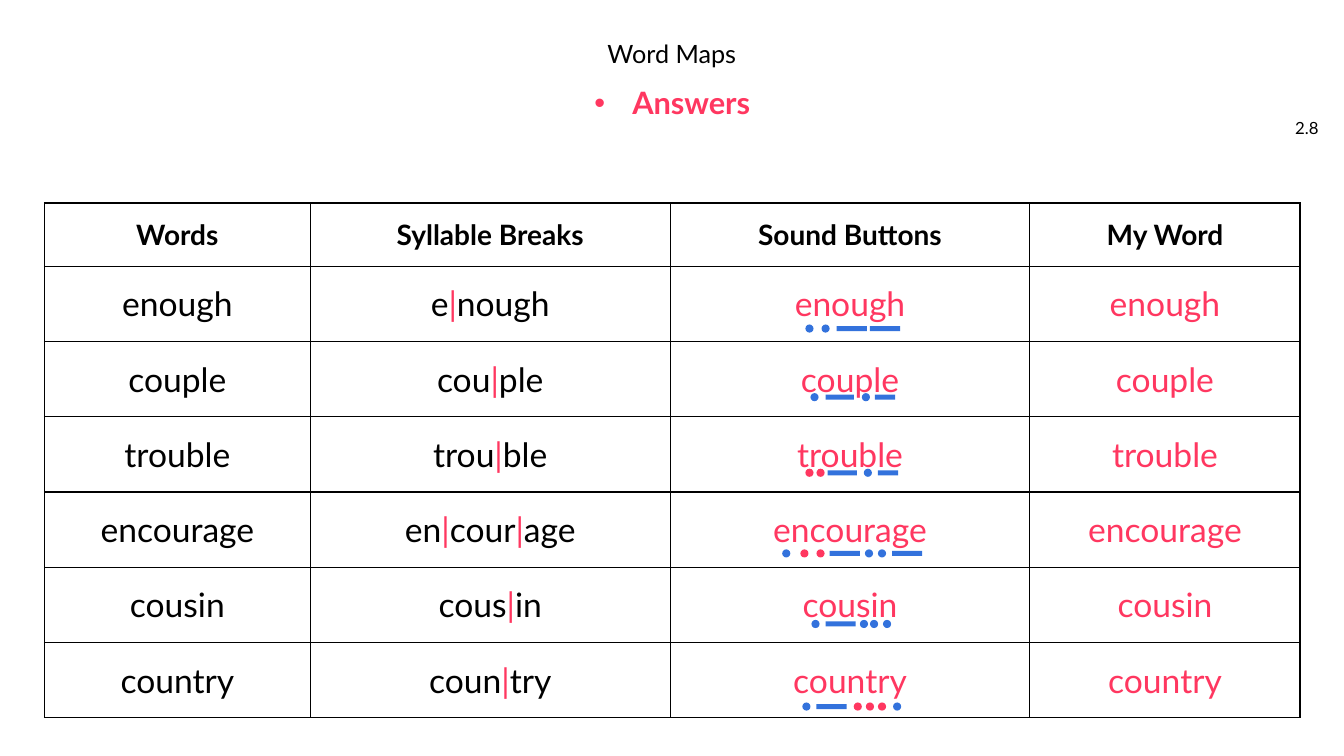
from dataclasses import dataclass

from lxml import etree
from pptx import Presentation
from pptx import util as u
from pptx.dml import color
from pptx.enum import shapes, text
from pptx.oxml import ns

Pt = u.Pt


@dataclass(frozen=True)
class Theme:
    font: str = "Lato"
    black: str = "000000"
    pink: str = "FF3760"
    blue: str = "3372DC"
    title: int = 18
    subtitle: int = 22
    header: int = 20
    word: int = 24
    number: int = 12


THEME = Theme()


@dataclass(frozen=True)
class Mark:
    left: float
    width: float = 0
    fill: str = THEME.blue


def pink_dot(left):
    return Mark(left, fill=THEME.pink)


DOT_SIZE = 5.8
BAR_HEIGHT = 3.6
HEADERS = ["Words", "Syllable Breaks", "Sound Buttons", "My Word"]
COLUMN_WIDTHS = [190, 257, 257, 193]
HEADER_HEIGHT, WORD_HEIGHT = 45.2, 53.75
SYLLABLES = ["e|nough", "cou|ple", "trou|ble", "en|cour|age", "cous|in", "coun|try"]
SOUND_BUTTONS = [
    (231.8, [Mark(575.3), Mark(586.8), Mark(597.6, 21.6), Mark(621.4, 21.6)]),
    (280.8, [Mark(578.9), Mark(589.7, 20.2), Mark(615.6), Mark(625, 14.4)]),
    (334.8, [pink_dot(575.3), pink_dot(583.2), Mark(591.1, 20.9), Mark(617),
             Mark(627.1, 14.4)]),
    (392.4, [Mark(558.7), pink_dot(571.7), pink_dot(583.2), Mark(592.6, 21.6),
             Mark(617.8), Mark(627.1), Mark(637.2, 21.6)]),
    (442.8, [Mark(579.6), Mark(589.7, 21.6), Mark(614.2), Mark(621.4), Mark(630.7)]),
    (501.8, [Mark(573.1), Mark(583.2, 21.6), pink_dot(609.8), pink_dot(618.5),
             pink_dot(627.1), Mark(637.9)]),
]


def rgb(value):
    return color.RGBColor.from_string(value)


def style_paragraph(para, size, ink, bold=False, align=text.PP_ALIGN.CENTER):
    para.alignment = align
    para.font.name = THEME.font
    para.font.size = Pt(size)
    para.font.bold = bold
    para.font.color.rgb = rgb(ink)


def place(box, left, top, width, height):
    box.left, box.top, box.width, box.height = map(Pt, (left, top, width, height))


def fill_text(box, words, size, ink, **style):
    frame = box.text_frame
    frame.text = words
    frame.word_wrap = True
    frame.auto_size = text.MSO_AUTO_SIZE.NONE
    frame.vertical_anchor = text.MSO_ANCHOR.MIDDLE
    para = frame.paragraphs[0]
    style_paragraph(para, size, ink, **style)
    return para


def fill_heading(box, words, size, ink, bold=False):
    para = fill_text(box, words, size, ink, bold=bold)
    para.line_spacing = 0.9
    para.space_before = Pt(0)


def remove_bullet(para):
    properties = para._p.get_or_add_pPr()
    properties.set("marL", "0")
    properties.set("indent", "0")
    etree.SubElement(properties, ns.qn("a:buNone"))


def add_borders(cell):
    properties = cell._tc.get_or_add_tcPr()
    for side in ("lnL", "lnR", "lnT", "lnB"):
        line = etree.SubElement(properties, ns.qn(f"a:{side}"), w=str(Pt(1)))
        solid = etree.SubElement(line, ns.qn("a:solidFill"))
        etree.SubElement(solid, ns.qn("a:srgbClr"), val=THEME.black)


def fill_cell(cell, words, size, ink, bold=False):
    add_borders(cell)
    cell.fill.background()
    cell.vertical_anchor = text.MSO_ANCHOR.MIDDLE
    para = cell.text_frame.paragraphs[0]
    style_paragraph(para, size, ink, bold)
    for index, syllable in enumerate(words.split("|")):
        if index:
            span = para.add_run()
            span.text = "|"
            span.font.color.rgb = rgb(THEME.pink)
        para.add_run().text = syllable


def add_word_table(page):
    frame = page.shapes.add_table(
        len(SYLLABLES) + 1, len(HEADERS), Pt(31.7), Pt(145),
        Pt(sum(COLUMN_WIDTHS)), Pt(HEADER_HEIGHT + WORD_HEIGHT * len(SYLLABLES)))
    table = frame.table
    table.first_row = table.horz_banding = False
    for column, width in zip(table.columns, COLUMN_WIDTHS):
        column.width = Pt(width)
    for index, row in enumerate(table.rows):
        row.height = Pt(WORD_HEIGHT if index else HEADER_HEIGHT)
    for cell, header in zip(table.rows[0].cells, HEADERS):
        fill_cell(cell, header, THEME.header, THEME.black, bold=True)
    inks = [THEME.black, THEME.black, THEME.pink, THEME.pink]
    for index, syllables in enumerate(SYLLABLES, start=1):
        word = syllables.replace("|", "")
        entries = [word, syllables, word, word]
        for cell, entry, ink in zip(table.rows[index].cells, entries, inks):
            fill_cell(cell, entry, THEME.word, ink)


def add_sound_buttons(page, top, marks):
    group = page.shapes.add_group_shape()
    for mark in marks:
        if mark.width:
            kind, width, height = shapes.MSO_SHAPE.RECTANGLE, mark.width, BAR_HEIGHT
        else:
            kind, width, height = shapes.MSO_SHAPE.OVAL, DOT_SIZE, DOT_SIZE
        offset = (DOT_SIZE - height) / 2
        button = group.shapes.add_shape(
            kind, Pt(mark.left), Pt(top + offset), Pt(width), Pt(height))
        button.shadow.inherit = False
        button.fill.solid()
        button.fill.fore_color.rgb = rgb(mark.fill)
        button.line.fill.background()


def main():
    deck = Presentation()
    deck.slide_width, deck.slide_height = Pt(960), Pt(540)
    page = deck.slides.add_slide(deck.slide_layouts[1])

    title = page.shapes.title
    place(title, 275, 26.6, 409.7, 25.2)
    fill_heading(title, "Word Maps", THEME.title, THEME.black)

    subtitle = page.placeholders[1]
    place(subtitle, 150.5, 60.5, 659.5, 28.8)
    remove_bullet(subtitle.text_frame.paragraphs[0])
    fill_heading(subtitle, "Answers", THEME.subtitle, THEME.pink, bold=True)

    number = page.shapes.add_textbox(Pt(903.6), Pt(77), Pt(45.4), Pt(28.8))
    fill_text(number, "2.8", THEME.number, THEME.black, align=text.PP_ALIGN.RIGHT)

    add_word_table(page)
    for top, marks in SOUND_BUTTONS:
        add_sound_buttons(page, top, marks)

    deck.save("out.pptx")


if __name__ == "__main__":
    main()
